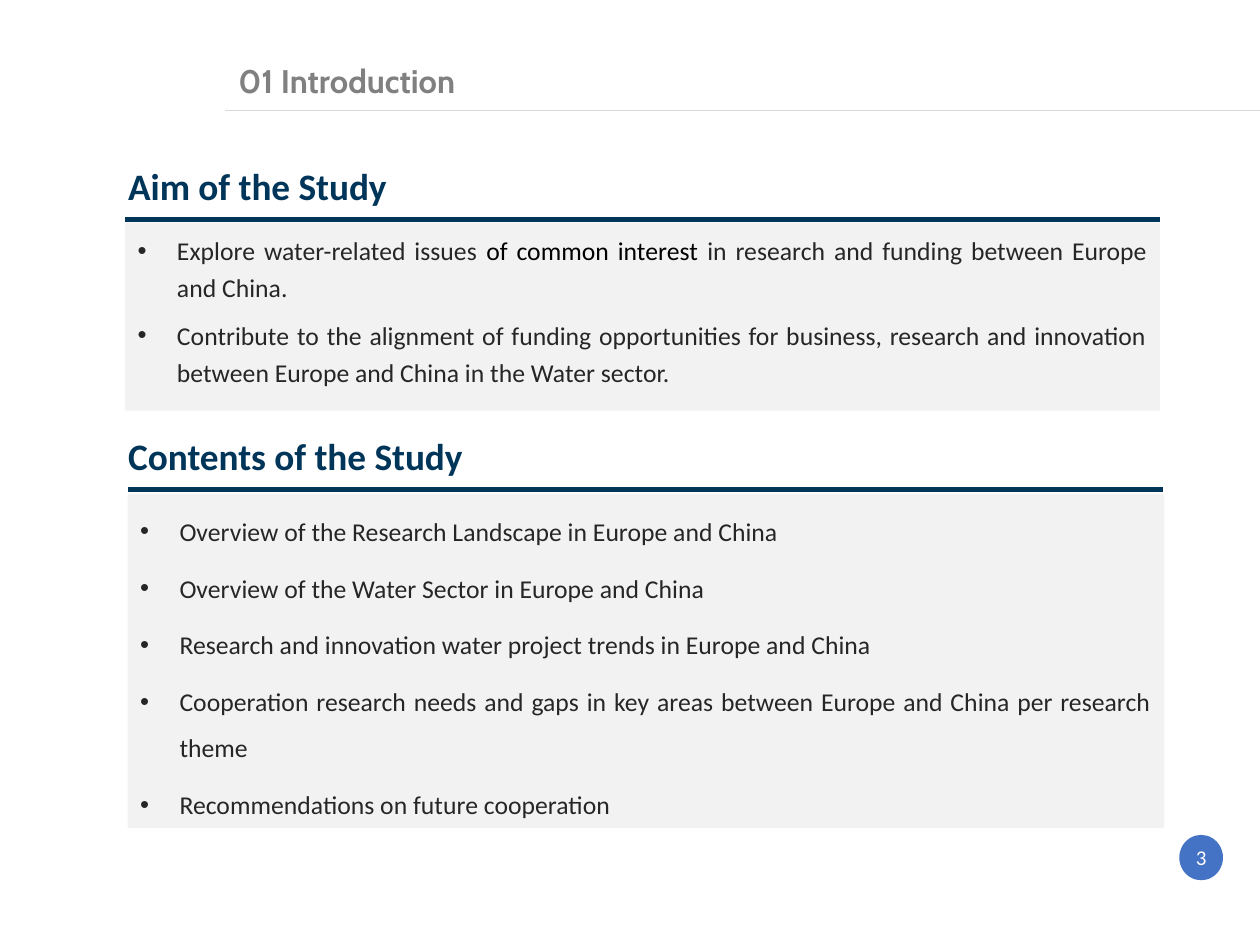
import pptx
import pptx.util
import pptx.dml.color
import pptx.enum.shapes
import pptx.enum.text
import pptx.oxml.ns
import lxml.etree

COLORS = {"navy": "00355A", "panel": "F2F2F2", "body": "262626", "black": "000000",
          "title": "808080", "hairline": "D9D9D9", "badge": "4472C4", "white": "FFFFFF"}
ALIGN = pptx.enum.text.PP_ALIGN
ANCHOR = pptx.enum.text.MSO_ANCHOR
SHAPE = pptx.enum.shapes.MSO_SHAPE

deck = pptx.Presentation()
deck.slide_width = pptx.util.Inches(7.5)
deck.slide_height = deck.slide_width * 3 // 4
column = deck.slide_width / 75
row = deck.slide_height / 56.25
page = deck.slides.add_slide(deck.slide_layouts[6])


def write(para, text, size=11, font="Calibri", color="body", bold=False,
          align=ALIGN.LEFT, spacing=None, after=None, bullet=False):
    if bullet and not para.runs:
        props = para._p.get_or_add_pPr()
        props.set("marL", str(round(2.34 * column)))
        props.set("indent", str(round(-2.34 * column)))
        for tag, key, value in (("a:buFont", "typeface", "Arial"), ("a:buChar", "char", "•")):
            lxml.etree.SubElement(props, pptx.oxml.ns.qn(tag)).set(key, value)
    para.alignment = align
    if spacing:
        para.line_spacing = spacing
    if after:
        para.space_after = pptx.util.Pt(after)
    span = para.add_run()
    span.text = text
    span.font.size = pptx.util.Pt(size)
    span.font.name = font
    span.font.bold = bold
    span.font.color.rgb = pptx.dml.color.RGBColor.from_string(COLORS[color])


def place(kind, left, top, width, height, color=None, weight=None):
    x, y, w, h = (round(left * column), round(top * row),
                  round(width * column), round(height * row))
    if kind == "line":
        line = page.shapes.add_connector(
            pptx.enum.shapes.MSO_CONNECTOR.STRAIGHT, x, y, x + w, y + h)
        line.line.color.rgb = pptx.dml.color.RGBColor.from_string(COLORS[color])
        line.line.width = pptx.util.Pt(weight)
        lxml.etree.SubElement(line._element.spPr, pptx.oxml.ns.qn("a:effectLst"))
        return line
    if kind == "text":
        return page.shapes.add_textbox(x, y, w, h)
    shape = page.shapes.add_shape(kind, x, y, w, h)
    shape.shadow.inherit = False
    shape.fill.solid()
    shape.fill.fore_color.rgb = pptx.dml.color.RGBColor.from_string(COLORS[color])
    shape.line.fill.background()
    return shape


place("line", 13.4, 6.6, 61.6, 0, "hairline", 0.5)
place(SHAPE.OVAL, 70.2, 49.7, 2.6, 2.7, "badge")

labels = [
    ((13.2, 3.45, 23.1, 3), "01 Introduction",
     dict(size=14, font="Cabin", color="title", bold=True, spacing=0.9)),
    ((55.9, 49.55, 16.9, 3), "3", dict(size=9, color="white", align=ALIGN.RIGHT)),
]
for area, text, style in labels:
    box = place("text", *area)
    box.text_frame.word_wrap = True
    box.text_frame.vertical_anchor = ANCHOR.MIDDLE
    write(box.text_frame.paragraphs[0], text, **style)

sections = [
    dict(heading="Aim of the Study", heading_top=9.25, heading_width=17.6,
         left=7.45, rule_top=13.05, panel=(13.25, 61.6, 11.2), spacing=1.2,
         items=[
             [("Explore water-related issues ", "body"), ("of common interest ", "black"),
              ("in research and funding between Europe and China.", "body")],
             [("Contribute to the alignment of funding opportunities for business, research "
               "and innovation between Europe and China in the Water sector.", "body")],
         ]),
    dict(heading="Contents of the Study", heading_top=25.3, heading_width=22.2,
         left=7.6, rule_top=29.15, panel=(29.4, 61.7, 19.9), spacing=1.5,
         items=[[(text, "body")] for text in (
             "Overview of the Research Landscape in Europe and China",
             "Overview of the Water Sector in Europe and China",
             "Research and innovation water project trends in Europe and China",
             "Cooperation research needs and gaps in key areas between Europe and China "
             "per research theme",
             "Recommendations on future cooperation",
         )]),
]
for section in sections:
    top, width, height = section["panel"]
    panel = place(SHAPE.RECTANGLE, section["left"], top, width, height, "panel")
    frame = panel.text_frame
    frame.word_wrap = True
    frame.vertical_anchor = ANCHOR.TOP
    frame.margin_left = frame.margin_right = round(0.75 * column)
    frame.margin_top = frame.margin_bottom = round(0.38 * row)
    for index, item in enumerate(section["items"]):
        para = frame.add_paragraph() if index else frame.paragraphs[0]
        for text, color in item:
            write(para, text, color=color, align=ALIGN.JUSTIFY,
                  spacing=section["spacing"], after=4.5, bullet=True)

    heading = place("text", 6.65, section["heading_top"], section["heading_width"], 3.7)
    heading.text_frame.word_wrap = False
    heading.text_frame.auto_size = pptx.enum.text.MSO_AUTO_SIZE.SHAPE_TO_FIT_TEXT
    write(heading.text_frame.paragraphs[0], section["heading"], size=16, color="navy", bold=True)
    place("line", section["left"], section["rule_top"], 61.6, 0, "navy", 2.25)

deck.save("out.pptx")
